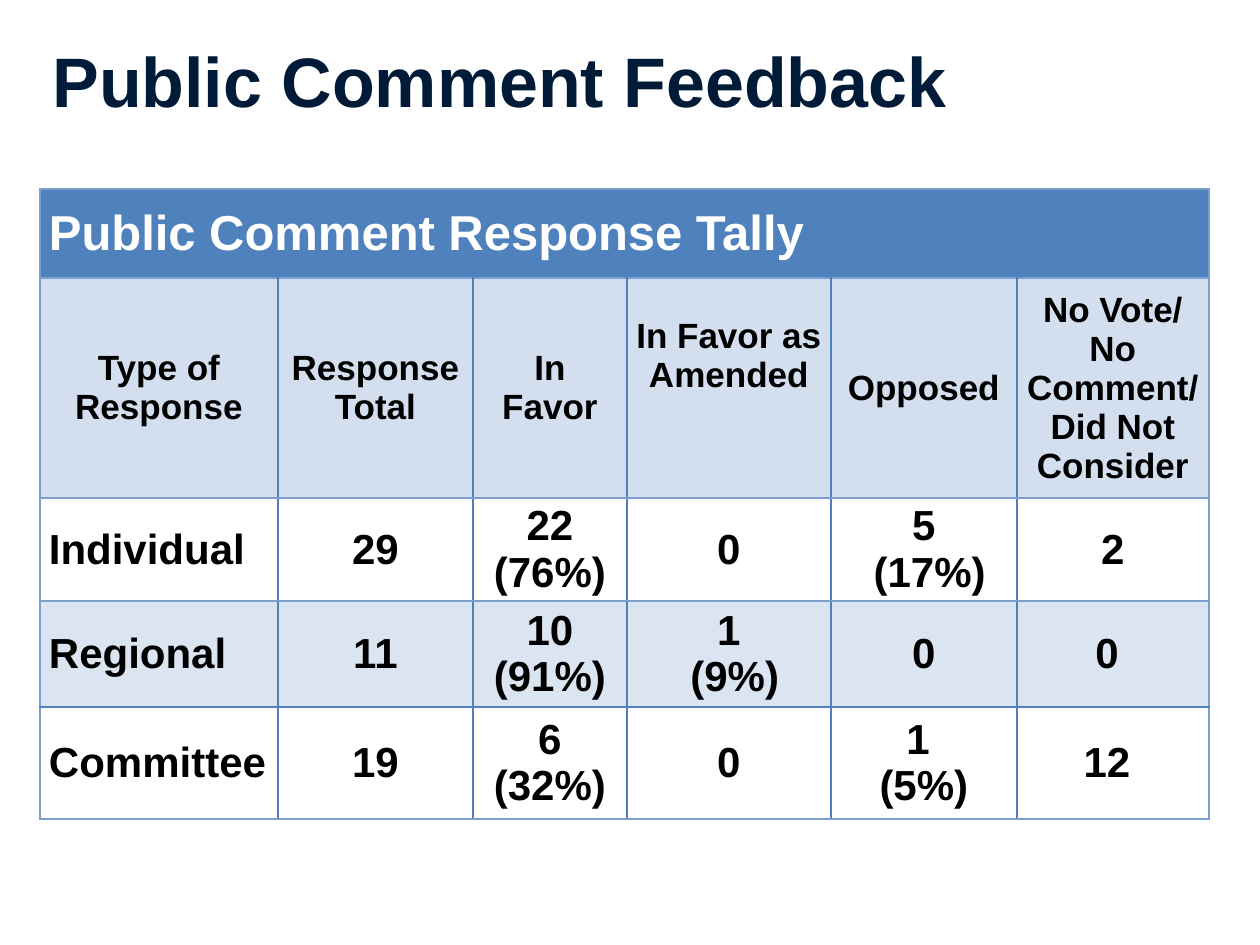
from dataclasses import dataclass

import lxml.etree
import pptx
import pptx.dml.color
import pptx.enum.text
import pptx.oxml.ns
import pptx.util

EMU_PER_PX = 914400 / 126


@dataclass(frozen=True)
class Theme:
    font: str = "Arial"
    title_size: int = 40
    banner_size: int = 28
    heading_size: int = 20
    body_size: int = 24
    navy: str = "001B37"
    blue: str = "4F81BD"
    light_line: str = "7BA0CD"
    heading_fill: str = "D3DFEE"
    band_fill: str = "DBE5F1"
    white: str = "FFFFFF"
    black: str = "000000"


def px(length):
    return pptx.util.Emu(round(length * EMU_PER_PX))


def add_text(paragraph, text, size, color, alignment):
    paragraph.alignment = alignment
    run = paragraph.add_run()
    run.text = text
    run.font.name = theme.font
    run.font.size = pptx.util.Pt(size)
    run.font.bold = True
    run.font.color.rgb = pptx.dml.color.RGBColor.from_string(color)


theme = Theme()
align = pptx.enum.text.PP_ALIGN
anchor = pptx.enum.text.MSO_ANCHOR

presentation = pptx.Presentation()
presentation.slide_width = px(1260)
presentation.slide_height = px(945)
slide = presentation.slides.add_slide(presentation.slide_layouts[5])

# Title
title = slide.shapes.title
title.left, title.top, title.width, title.height = px(40), px(21), px(1205), px(117)
title.text_frame.auto_size = pptx.enum.text.MSO_AUTO_SIZE.NONE
title.text_frame.vertical_anchor = anchor.MIDDLE
add_text(title.text_frame.paragraphs[0], "Public Comment Feedback",
         theme.title_size, theme.navy, align.LEFT)

# Response tally: a line break in a cell starts a new paragraph
tally = [
    ["Public Comment Response Tally", "", "", "", "", ""],
    ["Type of Response", "Response Total", "In Favor", "In Favor as Amended",
     "Opposed", "No Vote/\nNo Comment/ Did Not Consider"],
    ["Individual", "29", "22 (76%)", "0", "5\n (17%)", "2"],
    ["Regional", "11", "10 (91%)", "1\n (9%)", "0", "0 "],
    ["Committee", "19", "6 (32%)", "0", "1 \n(5%)", "12 "],
]
column_widths = [238, 195, 154, 204, 186, 192]
row_heights = [89, 220, 103, 106, 112]
# Fill, type size and text colour of each row
row_styles = [
    (theme.blue, theme.banner_size, theme.white),
    (theme.heading_fill, theme.heading_size, theme.black),
    (theme.white, theme.body_size, theme.black),
    (theme.band_fill, theme.body_size, theme.black),
    (None, theme.body_size, theme.black),
]
row_lines = [theme.light_line] * 4 + [theme.blue, theme.light_line]
column_lines = [theme.light_line] + [theme.blue] * 5 + [theme.light_line]

table = slide.shapes.add_table(
    len(row_heights), len(column_widths), px(40), px(189),
    px(sum(column_widths)), px(sum(row_heights))).table
table.first_row = False
table.horz_banding = False
for column, width in zip(table.columns, column_widths):
    column.width = px(width)
for row, height in zip(table.rows, row_heights):
    row.height = px(height)
table.cell(0, 0).merge(table.cell(0, len(column_widths) - 1))

for row_index, (texts, style) in enumerate(zip(tally, row_styles)):
    fill, size, color = style
    for column_index, text in enumerate(texts):
        cell = table.cell(row_index, column_index)
        cell.margin_left = cell.margin_right = px(9)
        cell.margin_top = cell.margin_bottom = 0
        cell.vertical_anchor = anchor.MIDDLE

        sides = {"lnL": column_lines[column_index],
                 "lnR": column_lines[column_index + 1],
                 "lnT": row_lines[row_index],
                 "lnB": row_lines[row_index + 1]}
        if row_index == 0:
            sides = dict.fromkeys(sides, theme.light_line)
        properties = cell._tc.get_or_add_tcPr()
        for side, line_color in sides.items():
            line = lxml.etree.SubElement(
                properties, pptx.oxml.ns.qn(f"a:{side}"), w=str(pptx.util.Pt(1)))
            line_fill = lxml.etree.SubElement(line, pptx.oxml.ns.qn("a:solidFill"))
            lxml.etree.SubElement(
                line_fill, pptx.oxml.ns.qn("a:srgbClr"), val=line_color)

        if fill:
            cell.fill.solid()
            cell.fill.fore_color.rgb = pptx.dml.color.RGBColor.from_string(fill)
        else:
            cell.fill.background()

        if not text:
            continue
        alignment = align.JUSTIFY if column_index == 0 and row_index != 1 else align.CENTER
        for line_index, line_text in enumerate(text.split("\n")):
            frame = cell.text_frame
            paragraph = frame.add_paragraph() if line_index else frame.paragraphs[0]
            add_text(paragraph, line_text, size, color, alignment)

# The "In Favor as Amended" heading hangs from the top of its cell
amended_heading = table.cell(1, 3)
amended_heading.vertical_anchor = anchor.TOP
amended_heading.margin_top = px(39)

presentation.save("out.pptx")
